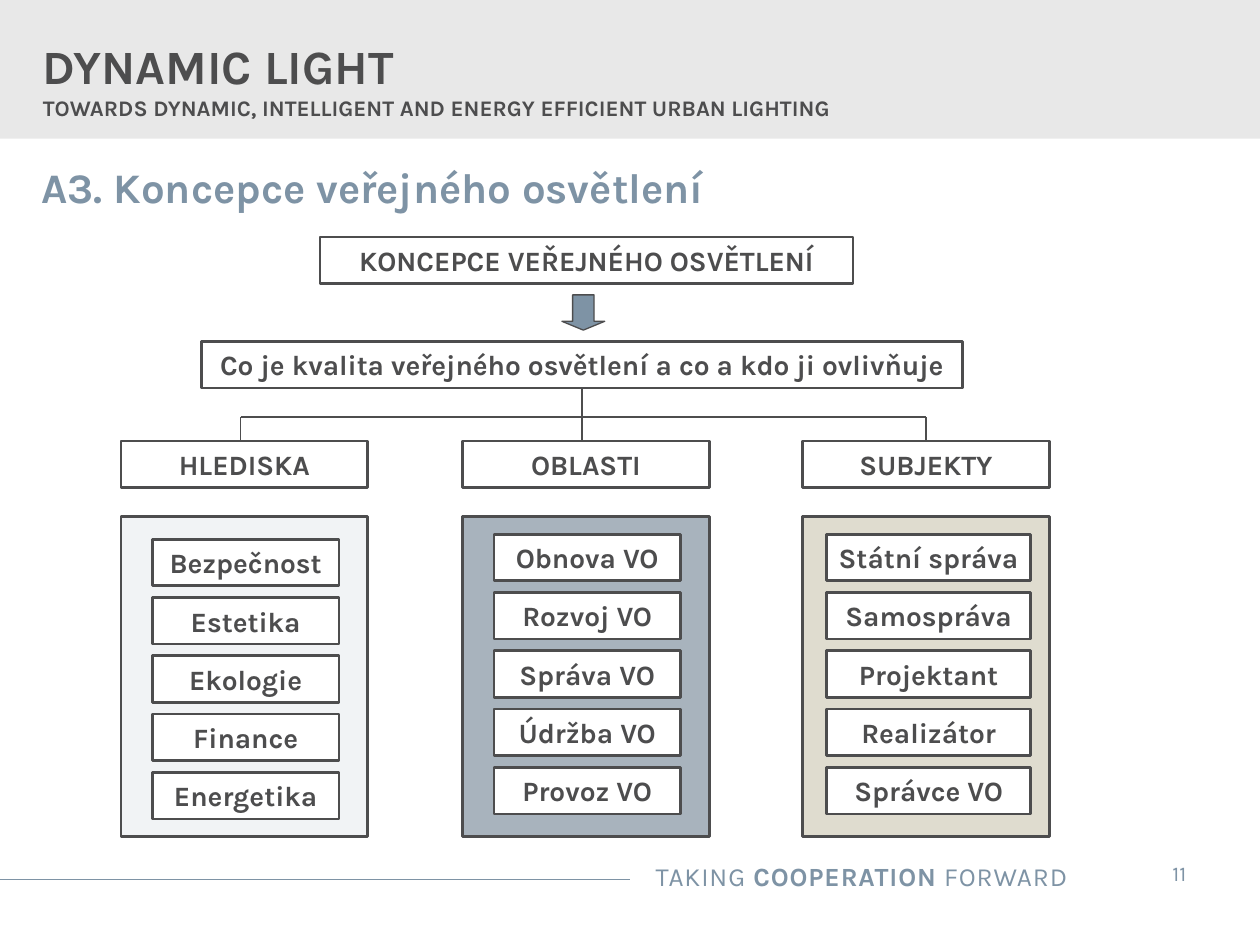
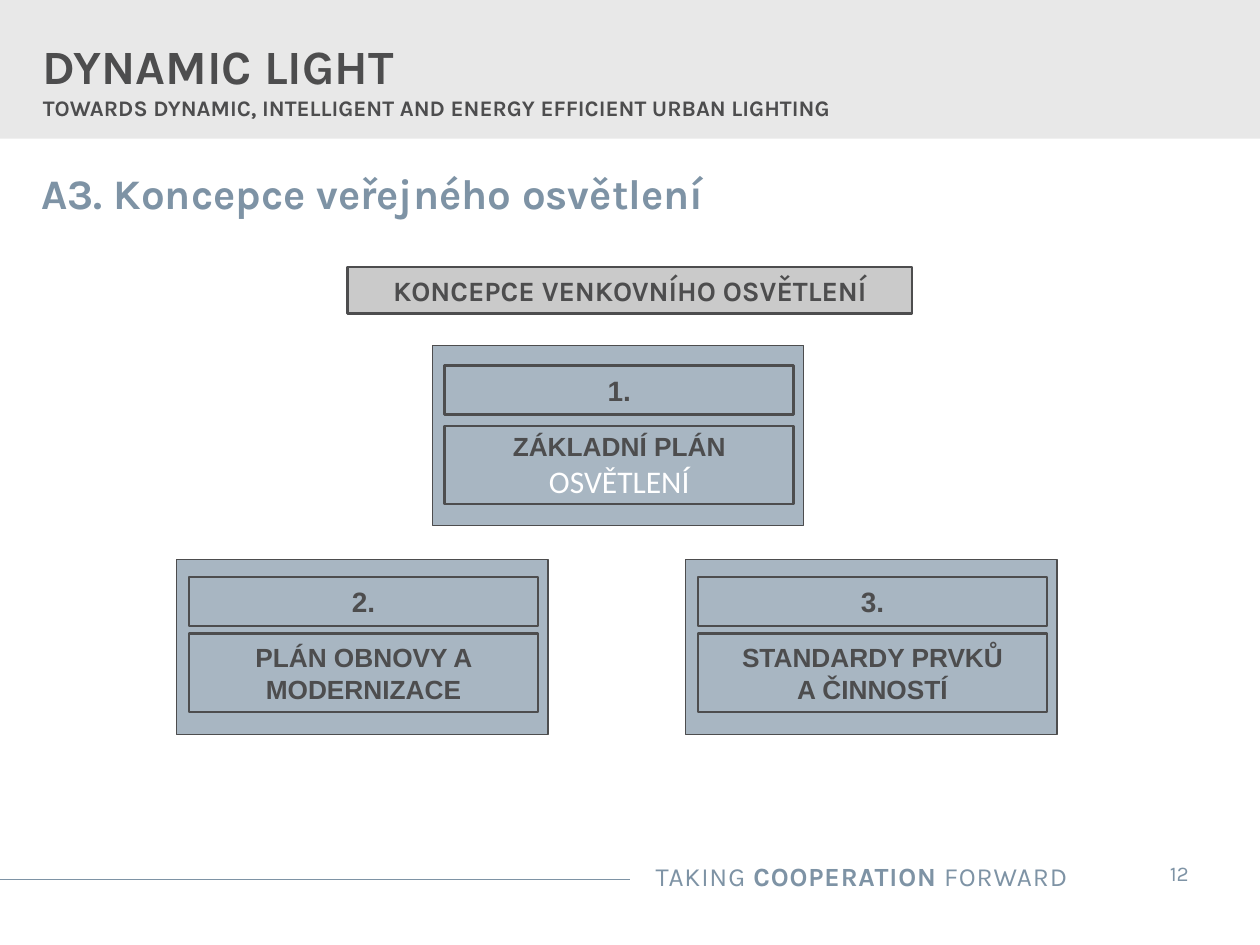
from lxml.etree import SubElement
from pptx import Presentation
from pptx.dml.color import RGBColor
from pptx.enum.shapes import MSO_CONNECTOR, MSO_SHAPE
from pptx.enum.text import MSO_ANCHOR, MSO_AUTO_SIZE, PP_ALIGN
from pptx.oxml.ns import qn
from pptx.util import Inches, Pt

STEEL = RGBColor(0x7E, 0x93, 0xA5)
DARK = RGBColor(0x4D, 0x4D, 0x4E)
BAND = RGBColor(0xE8, 0xE8, 0xE8)
GREY = RGBColor(0xCA, 0xCA, 0xCA)
WHITE = RGBColor(0xFF, 0xFF, 0xFF)
PALE = RGBColor(0xE5, 0xE9, 0xED)
SLATE = RGBColor(0x5A, 0x6F, 0x81)
SAND = RGBColor(0xC2, 0xBD, 0xA3)
KARLA, ARIAL = "Karla", "Arial"


class Deck:
    """Holds the shared style and the current slide."""

    def __init__(self):
        self.prs = Presentation()
        self.prs.slide_width, self.prs.slide_height = Inches(10), Inches(7.5)
        self.s = None

    def style(self, r, size, color=DARK, bold=True, font=KARLA):
        r.font.name, r.font.size = font, Pt(size)
        r.font.bold, r.font.color.rgb = bold, color

    def new_slide(self, title, title_top, number):
        self.s = self.prs.slides.add_slide(self.prs.slide_layouts[5])
        # Footer line, header band and slogan
        self.line(0, 6.98, 5, 6.98, STEEL)
        self.shape(0, 0, 10, 1.1, fill=BAND, line=None)
        self.slogan()
        self.slide_number(number)
        self.header()
        # Slide title
        sp = self.s.shapes.title
        sp.left, sp.top = Inches(0.23), Inches(title_top)
        sp.width, sp.height = Inches(9.06), Inches(0.5)
        tf = sp.text_frame
        tf.text = title
        tf.auto_size = MSO_AUTO_SIZE.NONE
        tf.vertical_anchor = MSO_ANCHOR.TOP
        p = tf.paragraphs[0]
        p.alignment = PP_ALIGN.LEFT
        p.space_before = Pt(0)
        self.style(p.runs[0], 24, STEEL)

    def textbox(self, x, y, w, h, wrap=True):
        sp = self.s.shapes.add_textbox(Inches(x), Inches(y), Inches(w), Inches(h))
        sp.text_frame.word_wrap = wrap
        return sp.text_frame

    def slogan(self):
        p = self.textbox(3.88, 6.78, 4.69, 0.35).paragraphs[0]
        p.alignment = PP_ALIGN.RIGHT
        for text, bold in (("TAKING ", False), ("COOPERATION", True), (" FORWARD", False)):
            r = p.add_run()
            r.text = text
            self.style(r, 15, STEEL, bold)
            r._r.get_or_add_rPr().set("spc", "50")

    def slide_number(self, number):
        tf = self.textbox(8.99, 6.73, 0.74, 0.4, wrap=False)
        tf.margin_left = tf.margin_right = Inches(0.2)
        tf.margin_top = tf.margin_bottom = Inches(0.1)
        p = tf.paragraphs[0]
        p.text = str(number)
        p.alignment = PP_ALIGN.CENTER
        self.style(p.runs[0], 12, STEEL, False)

    def header(self):
        tf = self.textbox(0, 0.24, 7.22, 0.75)
        tf.margin_left = Inches(0.34)
        tf.text = ("DYNAMIC LIGHT\v"
                   "TOWARDS DYNAMIC, INTELLIGENT AND ENERGY EFFICIENT URBAN LIGHTING")
        for r, size in zip(tf.paragraphs[0].runs, (27.3, 12.7)):
            self.style(r, size)

    def shape(self, x, y, w, h, fill=None, line=1.5, alpha=None, kind=MSO_SHAPE.RECTANGLE):
        sp = self.s.shapes.add_shape(kind, Inches(x), Inches(y), Inches(w), Inches(h))
        sp.shadow.inherit = False
        if fill is None:
            sp.fill.background()
        else:
            sp.fill.solid()
            sp.fill.fore_color.rgb = fill
        if alpha is not None:
            clr = sp._element.spPr.find(".//" + qn("a:srgbClr"))
            SubElement(clr, qn("a:alpha"), val=str(alpha * 1000))
        if line is None:
            sp.line.fill.background()
        else:
            sp.line.color.rgb, sp.line.width = DARK, Pt(line)
        return sp

    def box(self, x, y, w, h, text, fill=None, size=16, font=KARLA):
        sp = self.shape(x, y, w, h, fill)
        tf = sp.text_frame
        tf.word_wrap = True
        tf.margin_left = tf.margin_right = Inches(0.05)
        tf.text = text
        for p in tf.paragraphs:
            p.alignment = PP_ALIGN.CENTER
            self.style(p.runs[0], size, font=font)
        return sp

    def line(self, x1, y1, x2, y2, color=DARK, begin=None, end=None):
        c = self.s.shapes.add_connector(MSO_CONNECTOR.STRAIGHT, Inches(x1), Inches(y1),
                                        Inches(x2), Inches(y2))
        c.line.color.rgb, c.line.width = color, Pt(0.75)
        SubElement(c._element.spPr, qn("a:effectLst"))
        if begin is not None:
            c.begin_connect(begin, 2)
        if end is not None:
            c.end_connect(end, 0)

    def column(self, x, head, panel, item_x, item_y, item_w, items):
        """Heading box above a tinted panel of evenly spaced items."""
        self.shape(x, 4.1, 1.96, 2.54, panel, alpha=52)
        heading = self.box(x, 3.5, 1.96, 0.37, head)
        for i, item in enumerate(items):
            self.box(item_x, item_y + i * 1.85 / 4, item_w, 0.37, item, WHITE)
        return heading

    def plan(self, x, y, h, number, number_y, name, name_y):
        """Tinted panel with a number box and a name box."""
        self.shape(x, y, 2.95, h, STEEL, 0.75, alpha=67)
        self.box(x + 0.1, number_y, 2.77, 0.39, number, font=ARIAL)
        self.box(x + 0.1, name_y, 2.77, 0.62, name, size=15, font=ARIAL)


def concept_slide(d):
    d.new_slide("A3. Koncepce veřejného osvětlení", 1.23, 11)
    # Concept, arrow and question
    d.box(2.54, 1.88, 4.23, 0.37, "KONCEPCE VEŘEJNÉHO OSVĚTLENÍ")
    arrow = d.shape(4.46, 2.34, 0.34, 0.28, STEEL, 0.75, kind=MSO_SHAPE.DOWN_ARROW)
    arrow.adjustments[0], arrow.adjustments[1] = 0.5, 0.25
    question = d.box(1.6, 2.71, 6.04, 0.37,
                     "Co je kvalita veřejného osvětlení a co a kdo ji ovlivňuje")
    # Three columns
    d.column(0.96, "HLEDISKA", PALE, 1.21, 4.28, 1.48,
             ("Bezpečnost", "Estetika", "Ekologie", "Finance", "Energetika"))
    d.column(3.67, "OBLASTI", SLATE, 3.92, 4.24, 1.48,
             ("Obnova VO", "Rozvoj VO", "Správa VO", "Údržba VO", "Provoz VO"))
    subjects = d.column(6.37, "SUBJEKTY", SAND, 6.56, 4.24, 1.62,
                        ("Státní správa", "Samospráva", "Projektant", "Realizátor",
                         "Správce VO"))
    # Branching lines
    d.line(4.62, 3.08, 4.62, 3.5, begin=question)
    d.line(1.91, 3.31, 7.35, 3.31)
    d.line(1.91, 3.31, 1.91, 3.5)
    d.line(7.35, 3.31, 7.35, 3.5, end=subjects)


def plans_slide(d):
    d.new_slide("A3. Koncepce veřejného osvětlení", 1.28, 12)
    d.box(2.76, 2.12, 4.48, 0.37, "KONCEPCE VENKOVNÍHO OSVĚTLENÍ", GREY)
    # One plan on top, two below
    d.plan(3.43, 2.74, 1.43, "1.", 2.9, "ZÁKLADNÍ PLÁN\vOSVĚTLENÍ", 3.38)
    d.plan(1.4, 4.44, 1.39, "2.", 4.58, "PLÁN OBNOVY A MODERNIZACE", 5.03)
    d.plan(5.44, 4.44, 1.39, "3.", 4.58, "STANDARDY PRVKŮ\nA ČINNOSTÍ", 5.03)


def main():
    d = Deck()
    concept_slide(d)
    plans_slide(d)
    d.prs.save("out.pptx")


if __name__ == "__main__":
    main()
